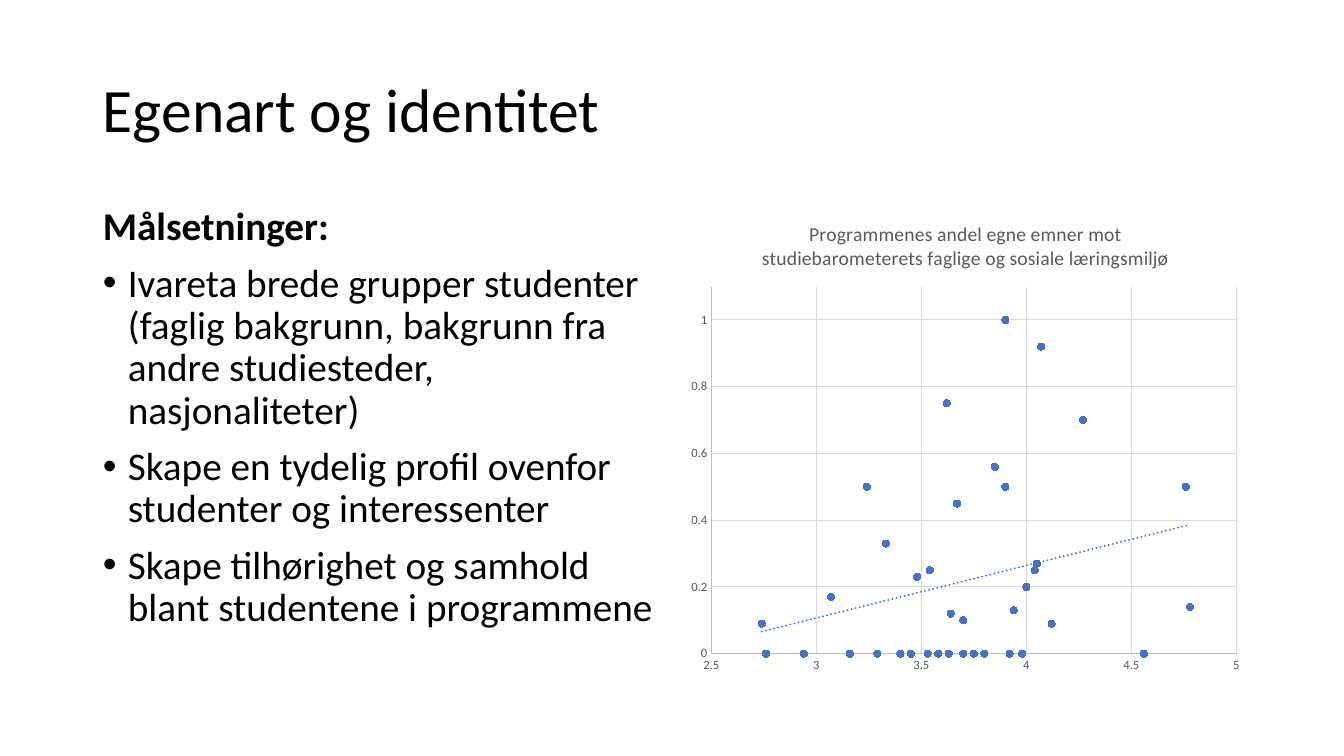
from dataclasses import dataclass

from lxml import etree
from pptx import Presentation
from pptx.chart.data import XyChartData
from pptx.dml.color import RGBColor
from pptx.enum.chart import XL_CHART_TYPE as ChartType
from pptx.enum.chart import XL_MARKER_STYLE as MarkerStyle
from pptx.enum.chart import XL_TICK_MARK as TickMark
from pptx.enum.text import MSO_ANCHOR as Anchor
from pptx.oxml import parse_xml
from pptx.oxml.ns import nsdecls, qn
from pptx.util import Pt

PX = 9144000 // 1008
SLIDE_SIZE = (1344, 756)
TITLE_BOX = (93, 40, 1159, 146)
GOALS_BOX = (93, 202, 571, 480)
CHART_BOX = (680, 202, 571, 480)
BULLET_INDENT = 25


@dataclass(frozen=True)
class Theme:
    font: str = "Calibri"
    text: RGBColor = RGBColor(0, 0, 0)
    muted: RGBColor = RGBColor(0x59, 0x59, 0x59)
    axis: RGBColor = RGBColor(0xBF, 0xBF, 0xBF)
    grid: RGBColor = RGBColor(0xD9, 0xD9, 0xD9)
    accent: RGBColor = RGBColor(0x44, 0x72, 0xC4)
    title_size: int = 44
    body_size: int = 28
    chart_title_size: int = 14
    label_size: int = 9
    marker_size: int = 5


THEME = Theme()

TITLE = "Egenart og identitet"
GOALS_HEADING = "Målsetninger:"
GOALS = (
    "Ivareta brede grupper studenter (faglig bakgrunn, bakgrunn fra "
    "andre studiesteder, nasjonaliteter)",
    "Skape en tydelig profil ovenfor studenter og interessenter",
    "Skape tilhørighet og samhold blant studentene i programmene",
)
CHART_TITLE = ("Programmenes andel egne emner mot "
               "studiebarometerets faglige og sosiale læringsmiljø")
# (learning environment score, share of own courses)
PROGRAMMES = (
    (3.58, 0), (3.33, 0.33), (3.9, 1), (3.07, 0.17), (3.67, 0.45),
    (4.12, 0.09), (3.63, 0), (4.78, 0.14), (4.27, 0.7), (4.07, 0.92),
    (4.76, 0.5), (2.94, 0), (3.54, 0.25), (3.16, 0), (4.04, 0.25),
    (4, 0.2), (3.98, 0), (3.64, 0.12), (3.07, 0.17), (3.9, 0.5),
    (3.62, 0.75), (3.85, 0.56), (4.05, 0.27), (3.8, 0), (3.94, 0.13),
    (3.4, 0), (3.24, 0.5), (2.74, 0.09), (3.48, 0.23), (3.7, 0),
    (3.45, 0), (3.7, 0.1), (3.92, 0), (3.75, 0), (3.53, 0),
    (4.56, 0), (3.29, 0), (2.76, 0), (3.8, 0),
)


def to_emu(box):
    return [length * PX for length in box]


def style_font(font, size, color, bold=False):
    font.name = THEME.font
    font.size = Pt(size)
    font.bold = bold
    font.color.rgb = color


def add_text_frame(slide, box, anchor):
    frame = slide.shapes.add_textbox(*to_emu(box)).text_frame
    frame.word_wrap = True
    frame.vertical_anchor = anchor
    return frame


def write_paragraph(paragraph, text, size, bold=False):
    paragraph.text = text
    paragraph.line_spacing = 0.9
    for run in paragraph.runs:
        style_font(run.font, size, THEME.text, bold)


def add_bullet(paragraph):
    properties = paragraph._p.get_or_add_pPr()
    properties.set("marL", str(BULLET_INDENT * PX))
    properties.set("indent", str(-BULLET_INDENT * PX))
    etree.SubElement(properties, qn("a:buFont"), typeface="Arial")
    etree.SubElement(properties, qn("a:buChar"), char="•")


def add_title(slide, box):
    frame = add_text_frame(slide, box, Anchor.MIDDLE)
    write_paragraph(frame.paragraphs[0], TITLE, THEME.title_size)


def add_goals(slide, box):
    frame = add_text_frame(slide, box, Anchor.TOP)
    write_paragraph(frame.paragraphs[0], GOALS_HEADING, THEME.body_size, bold=True)
    for goal in GOALS:
        paragraph = frame.add_paragraph()
        add_bullet(paragraph)
        write_paragraph(paragraph, goal, THEME.body_size)
        paragraph.space_before = Pt(10)


def style_axis(axis, minimum, maximum, step):
    axis.minimum_scale, axis.maximum_scale = minimum, maximum
    axis.major_unit = step
    axis.major_tick_mark = axis.minor_tick_mark = TickMark.NONE
    axis.has_major_gridlines = True
    for line, color in ((axis.format.line, THEME.axis),
                        (axis.major_gridlines.format.line, THEME.grid)):
        line.color.rgb = color
        line.width = Pt(0.75)
    style_font(axis.tick_labels.font, THEME.label_size, THEME.muted)
    axis.tick_labels.number_format = "General"
    axis.tick_labels.number_format_is_linked = False


def add_trendline(series):
    """Add a dotted linear trend line ahead of the series values."""
    trendline = parse_xml(
        f'<c:trendline {nsdecls("c", "a")}><c:spPr>'
        f'<a:ln w="{Pt(1.5)}" cap="rnd"><a:solidFill>'
        f'<a:srgbClr val="{THEME.accent}"/></a:solidFill>'
        '<a:prstDash val="sysDot"/></a:ln></c:spPr>'
        '<c:trendlineType val="linear"/><c:dispRSqr val="0"/>'
        '<c:dispEq val="0"/></c:trendline>')
    series._element.find(qn("c:xVal")).addprevious(trendline)


def style_series(series):
    series.format.line.fill.background()
    series.marker.style = MarkerStyle.CIRCLE
    series.marker.size = THEME.marker_size
    series.marker.format.fill.solid()
    series.marker.format.fill.fore_color.rgb = THEME.accent
    series.marker.format.line.color.rgb = THEME.accent
    add_trendline(series)


def add_programme_chart(slide, box):
    data = XyChartData()
    points = data.add_series("Series 1")
    for score, share in PROGRAMMES:
        points.add_data_point(score, share)
    chart = slide.shapes.add_chart(ChartType.XY_SCATTER, *to_emu(box), data).chart
    chart.has_legend = False
    style_font(chart.font, 10, THEME.text)
    title_frame = chart.chart_title.text_frame
    title_frame.text = CHART_TITLE
    style_font(title_frame.paragraphs[0].runs[0].font,
               THEME.chart_title_size, THEME.muted)
    chart.plots[0].vary_by_categories = False
    style_axis(chart.category_axis, 2.5, 5, 0.5)
    style_axis(chart.value_axis, 0, 1.1, 0.2)
    style_series(chart.plots[0].series[0])


def main():
    presentation = Presentation()
    presentation.slide_width, presentation.slide_height = to_emu(SLIDE_SIZE)
    slide = presentation.slides.add_slide(presentation.slide_layouts[6])
    add_title(slide, TITLE_BOX)
    add_goals(slide, GOALS_BOX)
    add_programme_chart(slide, CHART_BOX)
    presentation.save("out.pptx")


if __name__ == "__main__":
    main()
